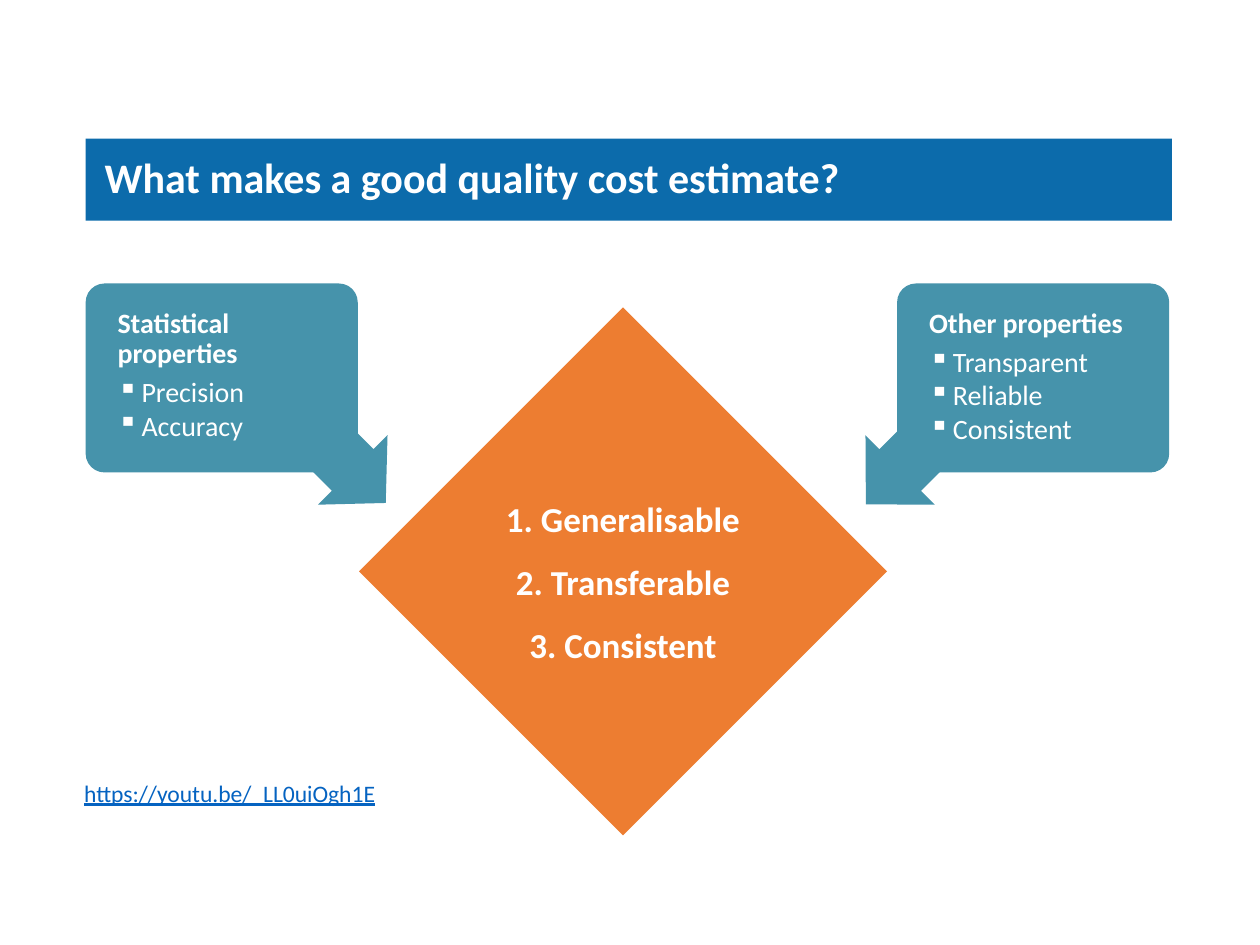
from lxml import etree
from pptx import Presentation
from pptx import util as u
from pptx.dml.color import RGBColor
from pptx.enum import shapes, text
from pptx.oxml.ns import qn

COLORS = {"title": "0C6BAB", "panel": "4693AB", "diamond": "ED7D31",
          "white": "FFFFFF", "link": "0563C1"}
WIDTH, HEIGHT = u.Inches(10), u.Inches(7.5)
SHAPE = shapes.MSO_SHAPE

HEADING = {"size": 16, "bold": True, "line_spacing": 0.9, "space_after": u.Pt(5)}
BULLET = {"size": 16, "line_spacing": 0.9, "space_after": u.Pt(2), "level": 1}
TITLE = {"size": 24, "bold": True, "line_spacing": 0.9}
CRITERION = {"size": 20, "bold": True, "line_spacing": 1.5,
             "alignment": text.PP_ALIGN.CENTER}
LINK = {"size": 13.5, "underline": True, "color": "link"}


def place(left, top, width, height):
    """Turn percentages of the slide's size into lengths."""
    return [u.Emu(round(share * side / 100)) for share, side in
            ((left, WIDTH), (top, HEIGHT), (width, WIDTH), (height, HEIGHT))]


def add_filled(slide, kind, box, color, adjustments=(), rotation=0):
    shape = slide.shapes.add_shape(kind, *place(*box))
    shape.shadow.inherit = False
    shape.fill.solid()
    shape.fill.fore_color.rgb = RGBColor.from_string(COLORS[color])
    shape.line.fill.background()
    shape.rotation = rotation
    for index, value in enumerate(adjustments):
        shape.adjustments[index] = value
    return shape


def add_bullet(paragraph):
    properties = paragraph._p.get_or_add_pPr()
    indent = u.Inches(0.19)
    properties.set("marL", str(indent))
    properties.set("indent", str(-indent))
    etree.SubElement(properties, qn("a:buChar"), char="▪")


def write(shape, lines, insets=(0.1, 0.05, 0.1, 0.05), wrap=True,
          anchor=text.MSO_ANCHOR.MIDDLE):
    """Fill a shape with (wording, format) lines; insets in inches."""
    frame = shape.text_frame
    frame.word_wrap = wrap
    frame.vertical_anchor = anchor
    for side, inset in zip(("left", "top", "right", "bottom"), insets):
        setattr(frame, f"margin_{side}", u.Inches(inset))
    for index, (wording, style) in enumerate(lines):
        paragraph = frame.paragraphs[0] if index == 0 else frame.add_paragraph()
        if style.get("level"):
            add_bullet(paragraph)
        paragraph.alignment = text.PP_ALIGN.LEFT
        for name in ("level", "alignment", "line_spacing", "space_after"):
            if name in style:
                setattr(paragraph, name, style[name])
        run = paragraph.add_run()
        run.text = wording
        values = {"name": "Calibri", "size": u.Pt(style["size"]),
                  "bold": style.get("bold", False),
                  "underline": style.get("underline", False)}
        for name, value in values.items():
            setattr(run.font, name, value)
        color = COLORS[style.get("color", "white")]
        run.font.color.rgb = RGBColor.from_string(color)


def add_panel(slide, left, heading, items, arrow_box, rotation):
    """Rounded panel with an arrow that points from behind it to the centre."""
    add_filled(slide, SHAPE.LEFT_ARROW, arrow_box, "panel", (0.6, 0.5), rotation)
    panel = add_filled(slide, SHAPE.ROUNDED_RECTANGLE, (left, 30, 21.6, 20),
                       "panel", (0.1,))
    lines = [(heading, HEADING)] + [(item, BULLET) for item in items]
    write(panel, lines, (0.21, 0.16, 0.1, 0.1), anchor=text.MSO_ANCHOR.TOP)


def main():
    presentation = Presentation()
    presentation.slide_width, presentation.slide_height = WIDTH, HEIGHT
    slide = presentation.slides.add_slide(presentation.slide_layouts[6])

    # Property panels
    add_panel(slide, 6.8, "Statistical properties", ["Precision", "Accuracy"],
              (24.3, 44.53, 7.4, 10.4), 225)
    add_panel(slide, 71.2, "Other properties",
              ["Transparent", "Reliable", "Consistent"],
              (67.6, 44.53, 7.7, 10.4), 315)

    # Title bar
    title = add_filled(slide, SHAPE.RECTANGLE, (6.8, 14.67, 86.2, 8.67), "title")
    write(title, [("What makes a good quality cost estimate?", TITLE)],
          (0.15, 0.1, 0.1, 0.1), wrap=False)

    # Video address
    address = slide.shapes.add_textbox(*place(5.7, 81.73, 26, 4.4))
    write(address, [("https://youtu.be/_LL0uiOgh1E", LINK)], wrap=False,
          anchor=text.MSO_ANCHOR.TOP)
    address.text_frame.auto_size = text.MSO_AUTO_SIZE.SHAPE_TO_FIT_TEXT

    # Central diamond
    diamond = add_filled(slide, SHAPE.DIAMOND, (28.5, 32.53, 41.9, 55.87), "diamond")
    criteria = ("Generalisable", "Transferable", "Consistent")
    write(diamond, [(f"{number}. {criterion}", CRITERION)
                    for number, criterion in enumerate(criteria, 1)])

    presentation.save("out.pptx")


if __name__ == "__main__":
    main()
